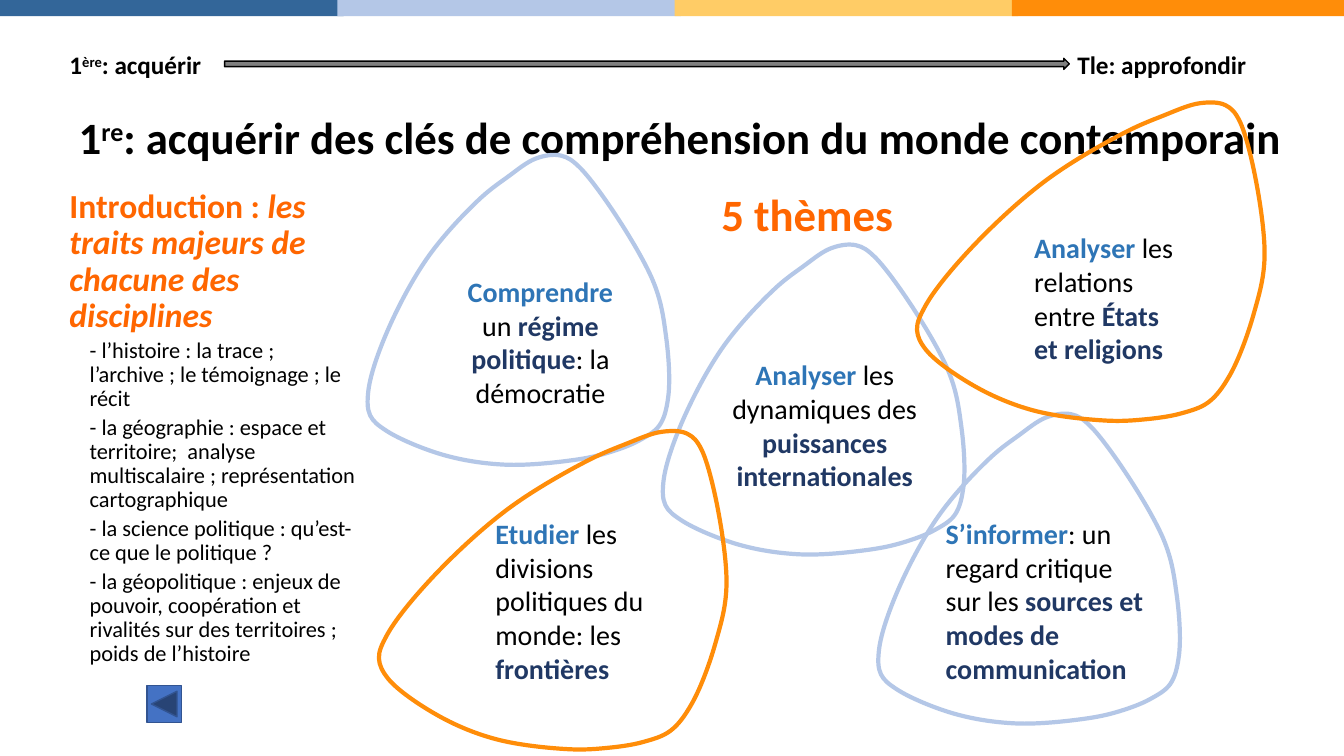
from dataclasses import dataclass

import lxml.etree
import pptx
import pptx.dml.color
import pptx.enum.shapes
import pptx.enum.text
import pptx.oxml.ns
import pptx.util

Cm, Pt = pptx.util.Cm, pptx.util.Pt
Shapes = pptx.enum.shapes.MSO_SHAPE
Align = pptx.enum.text.PP_ALIGN
Anchor = pptx.enum.text.MSO_ANCHOR

SLIDE_WIDTH, SLIDE_HEIGHT = 33.87, 19.05
BLACK, WHITE, NAVY, BLUE = "000000", "FFFFFF", "203864", "2E75B6"
PALE_BLUE, ORANGE, RED_ORANGE = "B4C7E7", "FF8D09", "FF6600"
BAR_COLOURS = ["336699", PALE_BLUE, "FFCC66", ORANGE]
BAR_PITCH, BAR_WIDTH, BAR_HEIGHT = 8.5, 8.66, 0.41
THEME_HEIGHT = 7.01


@dataclass
class Run:
    text: str
    colour: str = BLACK
    size: float = 18
    bold: bool = True
    italic: bool = False
    superscript: bool = False


@dataclass
class Theme:
    left: float
    top: float
    width: float
    alignment: Align
    runs: list[Run]


@dataclass
class Petal:
    left: float
    top: float
    outline: list[tuple[float, float]]
    colour: str


def verb(text: str) -> Run:
    return Run(text, BLUE, 20)


def plain(text: str) -> Run:
    return Run(text, BLACK, 20, bold=False)


def key(text: str) -> Run:
    return Run(text, NAVY, 20)


THEMES = [
    Theme(9.3, 5.11, 8.64, Align.CENTER,
          [verb("Comprendre "), plain("un "), key("régime politique"), plain(": la démocratie")]),
    Theme(15.54, 7.21, 10.49, Align.CENTER,
          [verb("Analyser "), plain("les dynamiques des "), key("puissances internationales")]),
    Theme(9.65, 11.63, 10.34, Align.LEFT,
          [verb("Etudier "), plain("les divisions politiques du monde: les "), key("frontières")]),
    Theme(20.8, 11.63, 11.13, Align.LEFT,
          [verb("S’informer"), plain(": un regard critique sur les "),
           key("sources et modes de communication")]),
    Theme(23.65, 4.01, 8.66, Align.LEFT,
          [verb("Analyser "), plain("les relations entre "), key("États et religions")]),
]

UPRIGHT_OUTLINE = [
    (0.48, 6.96), (0.08, 6.58), (0.03, 5.99), (0.43, 4.65), (1.5, 2.64), (2.79, 1.17), (3.53, 0.58),
    (4.27, 0.1), (4.88, 0.03), (5.36, 0.33), (7.19, 3.15), (7.54, 4.62), (7.59, 6.12), (7.37, 6.83),
    (6.86, 7.21), (6.07, 7.52), (5.23, 7.7), (3.48, 7.82), (1.91, 7.57),
]
LEANING_OUTLINE = [
    (0.23, 6.25), (0, 5.74), (0.2, 5.16), (1.22, 3.84), (3.18, 2.03), (5.16, 0.81), (6.17, 0.36),
    (7.14, 0.03), (7.77, 0.08), (8.13, 0.48), (8.76, 3.78), (8.48, 5.36), (7.87, 6.91), (7.34, 7.57),
    (6.65, 7.85), (5.72, 8), (4.78, 8.03), (2.92, 7.77), (1.45, 7.16),
]
PETALS = [
    Petal(9.25, 3.89, UPRIGHT_OUTLINE, PALE_BLUE),
    Petal(22.12, 10.41, UPRIGHT_OUTLINE, PALE_BLUE),
    Petal(16.69, 6.15, UPRIGHT_OUTLINE, PALE_BLUE),
    Petal(9.55, 10.85, LEANING_OUTLINE, ORANGE),
    Petal(23.11, 2.57, LEANING_OUTLINE, ORANGE),
]

DISCIPLINES = [
    "- l’histoire : la trace ; l’archive ; le témoignage ; le récit",
    "- la géographie : espace et territoire;  analyse multiscalaire ; représentation cartographique",
    "- la science politique : qu’est-ce que le politique ?",
    "- la géopolitique : enjeux de pouvoir, coopération et rivalités sur des territoires ; "
    "poids de l’histoire",
]


def rgb(colour: str) -> pptx.dml.color.RGBColor:
    return pptx.dml.color.RGBColor.from_string(colour)


def apply(target, **values) -> None:
    for name, value in values.items():
        setattr(target, name, value)


def write(paragraph, runs: list[Run], **paragraph_format) -> None:
    apply(paragraph, **paragraph_format)
    for item in runs:
        run = paragraph.add_run()
        run.text = item.text
        apply(run.font, name="Calibri", size=Pt(item.size), bold=item.bold, italic=item.italic)
        run.font.color.rgb = rgb(item.colour)
        if item.superscript:
            run._r.get_or_add_rPr().set("baseline", "30000")


def add_text(slide, left: float, top: float, width: float, height: float, runs: list[Run], **paragraph_format):
    box = slide.shapes.add_textbox(Cm(left), Cm(top), Cm(width), Cm(height))
    box.text_frame.word_wrap = True
    write(box.text_frame.paragraphs[0], runs, **paragraph_format)
    return box.text_frame


def paint(shape, fill: str | None = None, line: str | None = None, weight: float = 1) -> None:
    shape.shadow.inherit = False
    if fill:
        shape.fill.solid()
        shape.fill.fore_color.rgb = rgb(fill)
    else:
        shape.fill.background()
    if line:
        shape.line.color.rgb = rgb(line)
        shape.line.width = Pt(weight)
    else:
        shape.line.fill.background()


def add_preset(slide, kind, left: float, top: float, width: float, height: float, fill: str, line: str | None = None):
    shape = slide.shapes.add_shape(kind, Cm(left), Cm(top), Cm(width), Cm(height))
    paint(shape, fill, line)
    return shape


def bend_sides(shape, anchors: list[complex]) -> None:
    """Turn the straight sides into a closed centripetal Catmull-Rom curve."""
    origin, count = complex(shape.left, shape.top), len(anchors)
    for index, side in enumerate(list(shape._element.iter(pptx.oxml.ns.qn("a:lnTo")))):
        before, start, end, after = (anchors[(index + shift) % count] for shift in (-1, 0, 1, 2))
        a, b, c = abs(start - before) ** 0.5, abs(end - start) ** 0.5, abs(after - end) ** 0.5
        leaving = b * ((start - before) / a - (end - before) / (a + b)) + end - start
        arriving = b * ((after - end) / c - (after - start) / (b + c)) + end - start
        side.tag = pptx.oxml.ns.qn("a:cubicBezTo")
        for position, handle in enumerate((start + leaving / 3, end - arriving / 3)):
            local = handle - origin
            point = lxml.etree.Element(pptx.oxml.ns.qn("a:pt"), x=str(round(local.real)), y=str(round(local.imag)))
            side.insert(position, point)


def add_petal(slide, petal: Petal) -> None:
    points = [(Cm(petal.left + x), Cm(petal.top + y)) for x, y in petal.outline]
    builder = slide.shapes.build_freeform(*points[0])
    builder.add_line_segments(points[1:] + points[:1], close=True)
    shape = builder.convert_to_shape()
    bend_sides(shape, [complex(x, y) for x, y in points])
    paint(shape, line=petal.colour, weight=3)


def add_introduction(slide) -> None:
    frame = add_text(slide, 1.5, 4.65, 7.92, 12.62, [
        Run("Introduction : ", RED_ORANGE, 24),
        Run("les traits majeurs de chacune des disciplines", RED_ORANGE, 24, italic=True),
    ], line_spacing=0.9)
    for discipline in DISCIPLINES:
        paragraph = frame.add_paragraph()
        write(paragraph, [Run(discipline, size=16, bold=False)], line_spacing=0.9, space_before=Pt(3.2))
        paragraph._p.get_or_add_pPr().set("marL", str(Cm(0.51)))


def add_title(slide) -> None:
    title = slide.shapes.title
    apply(title, left=Cm(1.5), top=Cm(2.64), width=Cm(31.29), height=Cm(1.65))
    apply(title.text_frame, word_wrap=True, vertical_anchor=Anchor.TOP,
          auto_size=pptx.enum.text.MSO_AUTO_SIZE.NONE)
    write(title.text_frame.paragraphs[0], [
        Run("1", size=32), Run("re", size=32, superscript=True),
        Run(": acquérir des clés de compréhension du monde contemporain", size=32),
    ], alignment=Align.CENTER, line_spacing=1.0)


def main() -> None:
    presentation = pptx.Presentation()
    apply(presentation, slide_width=Cm(SLIDE_WIDTH), slide_height=Cm(SLIDE_HEIGHT))
    slide = presentation.slides.add_slide(presentation.slide_layouts.get_by_name("Title Only"))

    add_title(slide)
    add_introduction(slide)
    add_text(slide, 1.5, 1.12, 4.1, 1.03, [Run("1"), Run("ère", superscript=True), Run(": acquérir")])
    add_text(slide, 26.9, 1.12, 5.5, 1.03, [Run("Tle: approfondir")])
    add_preset(slide, Shapes.RIGHT_ARROW, 5.66, 1.47, 21.29, 0.28, "808080", BLACK)
    add_text(slide, 17.93, 4.57, 4.88, 1.63, [Run("5 thèmes", RED_ORANGE, 32)]).word_wrap = False

    for theme in THEMES:
        diamond = add_preset(slide, Shapes.DIAMOND, theme.left, theme.top, theme.width, THEME_HEIGHT, WHITE)
        apply(diamond.text_frame, word_wrap=True, vertical_anchor=Anchor.MIDDLE)
        write(diamond.text_frame.paragraphs[0], theme.runs, alignment=theme.alignment)
    for petal in PETALS:
        add_petal(slide, petal)
    for index, colour in enumerate(BAR_COLOURS):
        left = index * BAR_PITCH
        add_preset(slide, Shapes.RECTANGLE, left, 0, min(BAR_WIDTH, SLIDE_WIDTH - left), BAR_HEIGHT, colour)
    add_preset(slide, Shapes.ACTION_BUTTON_BACK_OR_PREVIOUS, 3.71, 17.27, 0.86, 0.94, "4472C4", "325491")
    presentation.save("out.pptx")


if __name__ == "__main__":
    main()
